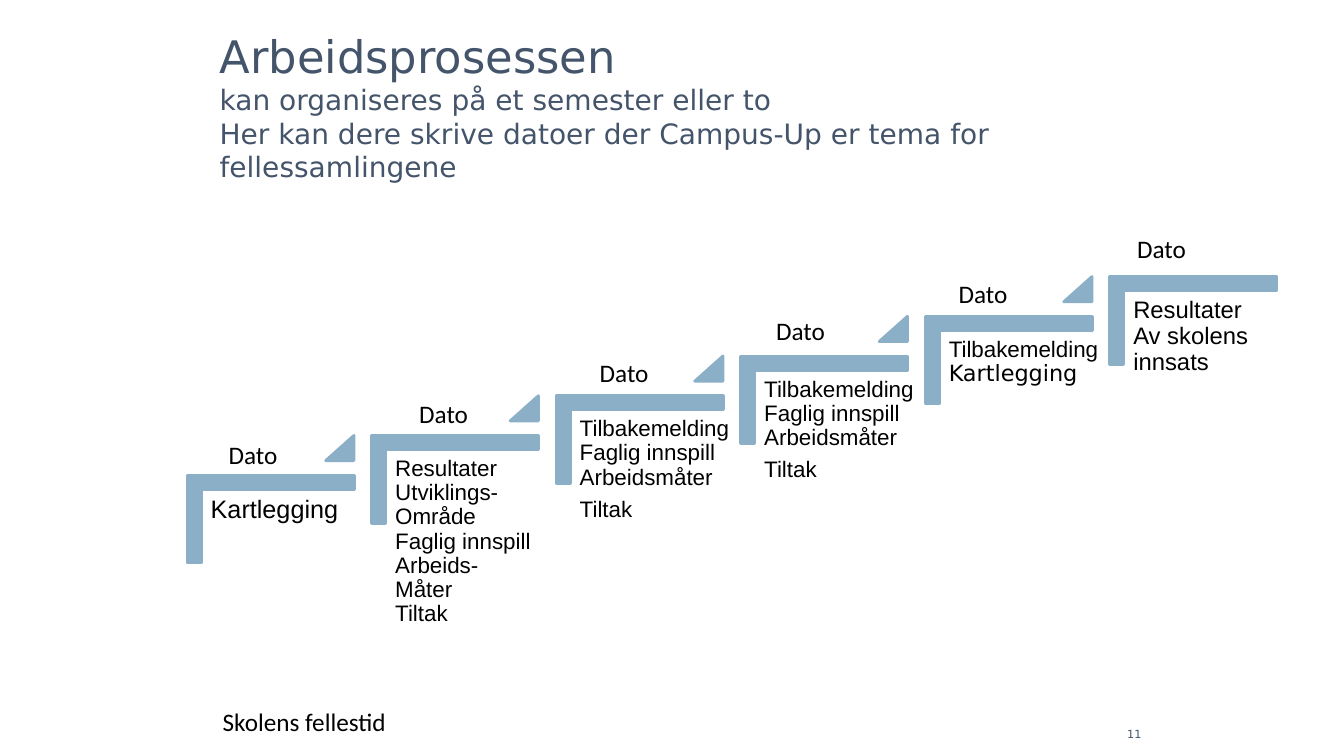
from dataclasses import dataclass

from pptx import Presentation
from pptx.dml.color import RGBColor
from pptx.enum.shapes import MSO_SHAPE
from pptx.enum.text import MSO_ANCHOR, PP_ALIGN
from pptx.util import Inches, Pt

BLUE, SLATE, BLACK = "8AAFC6", "44546A", "000000"
SANS = "DejaVu Sans"
STEP_RIGHT, STEP_UP = 1.83, 0.394


@dataclass
class Line:
    text: str
    size: float = 16
    font: str = "Arial"
    color: str = BLACK
    before: float = 0


@dataclass
class Step:
    lines: list[Line]
    width: float
    date_box: tuple[float, float, float, float]


def rgb(value: str) -> RGBColor:
    return RGBColor.from_string(value)


def add_run(paragraph, line: Line) -> None:
    run = paragraph.add_run()
    run.text = line.text
    run.font.size = Pt(line.size)
    run.font.name = line.font
    run.font.color.rgb = rgb(line.color)


def add_frame(slide, box: tuple, inset_x: float = 0.1, inset_y: float = 0.05):
    frame = slide.shapes.add_textbox(*map(Inches, box)).text_frame
    frame.word_wrap = True
    frame.margin_left = frame.margin_right = Inches(inset_x)
    frame.margin_top = frame.margin_bottom = Inches(inset_y)
    return frame


def add_label(slide, box: tuple, line: Line, align=PP_ALIGN.LEFT) -> None:
    paragraph = add_frame(slide, box).paragraphs[0]
    paragraph.alignment = align
    add_run(paragraph, line)


def add_title(slide, lines: list[Line]) -> None:
    frame = add_frame(slide, (2.08, 1, 9.33, 0.92), inset_y=0.1)
    frame.vertical_anchor = MSO_ANCHOR.BOTTOM
    paragraph = frame.paragraphs[0]
    for index, line in enumerate(lines):
        if index:
            paragraph.add_line_break()
        add_run(paragraph, line)


def add_blue_shape(slide, kind: MSO_SHAPE, box: tuple, adjustments: list[float], rotation: float = 0) -> None:
    shape = slide.shapes.add_shape(kind, *map(Inches, box))
    for index, value in enumerate(adjustments):
        shape.adjustments[index] = value
    shape.rotation = rotation
    shape.shadow.inherit = False
    shape.fill.solid()
    shape.fill.fore_color.rgb = rgb(BLUE)
    shape.line.color.rgb = rgb(BLUE)
    shape.line.width = Pt(2)


def add_step(slide, index: int, step: Step, is_last: bool) -> None:
    shift = index * STEP_RIGHT
    top = 4.32 - index * STEP_UP
    add_blue_shape(slide, MSO_SHAPE.CORNER, (2.25 + shift, top, 0.87, 1.66), [0.161, 0.161], 90)
    frame = add_frame(slide, (2.02 + shift, top + 0.54, step.width, 1.14), 0.07, 0.07)
    for number, line in enumerate(step.lines):
        paragraph = frame.add_paragraph() if number else frame.paragraphs[0]
        paragraph.line_spacing = 0.9
        paragraph.space_before = Pt(line.before)
        add_run(paragraph, line)
    if not is_last:
        add_blue_shape(slide, MSO_SHAPE.ISOSCELES_TRIANGLE, (3.23 + shift, top, 0.28, 0.25), [1])


FEEDBACK = [Line("Tilbakemelding"), Line("Faglig innspill"), Line("Arbeidsmåter"), Line("Tiltak", before=5.6)]
DEVELOPMENT = ["Resultater", "Utviklings-", "Område", "Faglig innspill", "Arbeids-", "Måter", "Tiltak"]
STEPS = [
    Step([Line("Kartlegging", 18)], 1.63, (2.17, 4.31, 0.94, 0.34)),
    Step([Line(text) for text in DEVELOPMENT], 1.5, (4.06, 3.9, 1.06, 0.4)),
    Step(FEEDBACK, 1.79, (5.85, 3.5, 0.94, 0.4)),
    Step(FEEDBACK, 1.63, (7.6, 3.08, 0.94, 0.4)),
    Step([Line("Tilbakemelding"), Line("Kartlegging", font=SANS)], 1.63, (9.41, 2.71, 1.12, 0.4)),
    Step([Line(text, 17) for text in ("Resultater", "Av skolens", "innsats")], 1.5, (11.18, 2.27, 1.36, 0.4)),
]
TITLE = [
    Line("Arbeidsprosessen", 32, SANS, SLATE),
    Line("kan organiseres på et semester eller to", 20, SANS, SLATE),
    Line("Her kan dere skrive datoer der Campus-Up er tema for fellessamlingene", 20, SANS, SLATE),
]


def main() -> None:
    deck = Presentation()
    deck.slide_width, deck.slide_height = Inches(13.33), Inches(7.5)
    slide = deck.slides.add_slide(deck.slide_layouts[6])

    # Heading and page number
    add_title(slide, TITLE)
    add_label(slide, (10, 7.17, 1.42, 0.25), Line("11", 8, SANS, SLATE), PP_ALIGN.RIGHT)

    # Staircase
    for index, step in enumerate(STEPS):
        add_step(slide, index, step, index == len(STEPS) - 1)

    # Dates above the steps, and the caption
    for step in STEPS:
        add_label(slide, step.date_box, Line("Dato", 18, "Calibri"))
    add_label(slide, (2.11, 6.96, 4.99, 0.4), Line("Skolens fellestid", 18, "Calibri"))

    deck.save("out.pptx")


if __name__ == "__main__":
    main()
